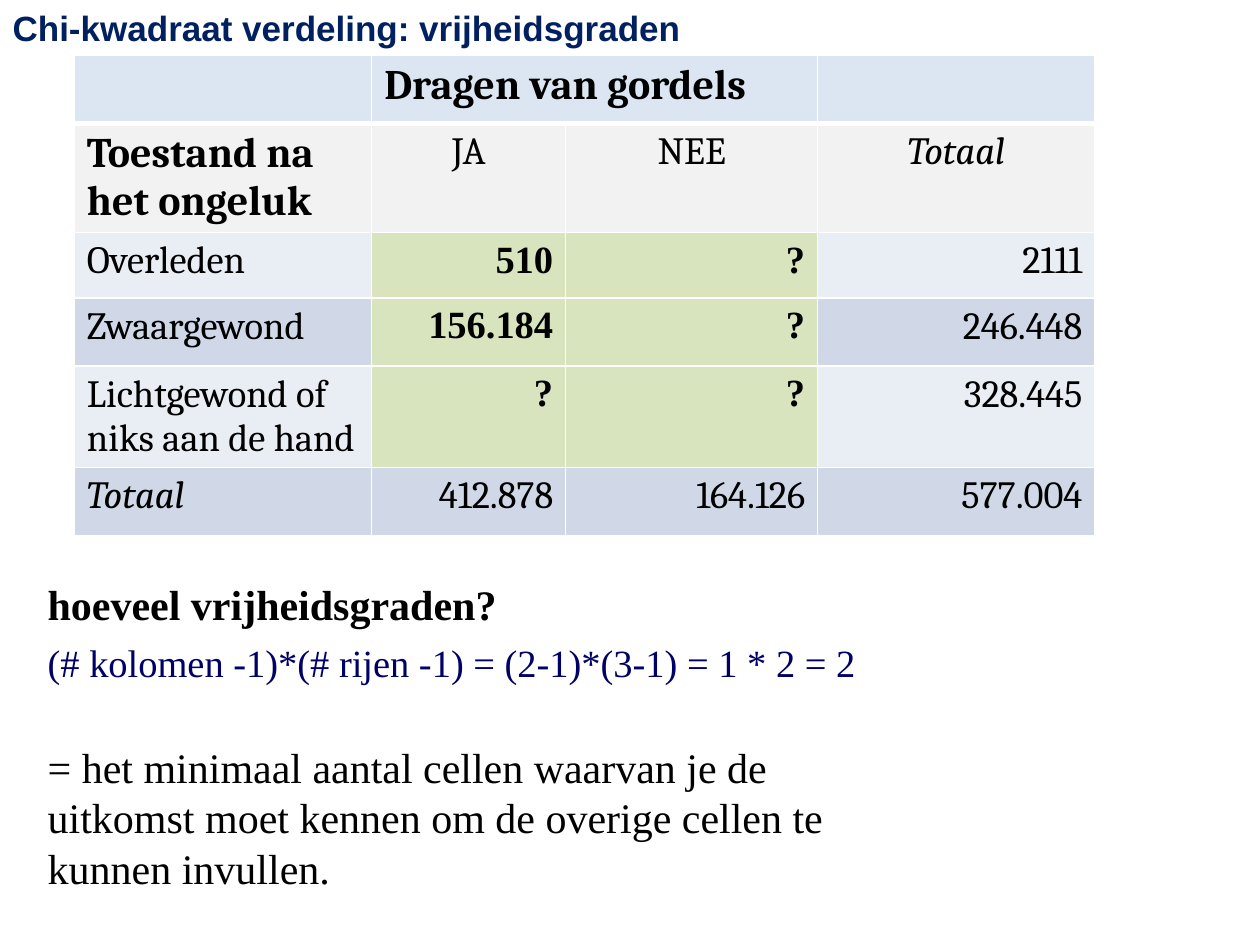
from dataclasses import dataclass
from typing import Optional

from lxml.etree import SubElement
from pptx import Presentation
from pptx.dml.color import RGBColor as RGB
from pptx.enum.text import MSO_ANCHOR as Anchor, PP_ALIGN as Align
from pptx.oxml.ns import qn
from pptx.util import Inches, Pt


@dataclass(frozen=True)
class Theme:
    black: str = "000000"
    title: str = "002060"
    formula: str = "000066"
    white: str = "FFFFFF"
    header: str = "DCE6F2"
    subheader: str = "F2F2F2"
    bands: tuple = ("E9EDF4", "D0D8E8")
    inner: str = "D7E4BD"
    title_size: int = 20
    normal: int = 22
    large: int = 24
    sans: str = "Arial"
    serif: str = "Times New Roman"
    table: str = "Cambria"


THEME = Theme()


@dataclass(frozen=True)
class Style:
    font: str
    size: int
    color: str = THEME.black
    bold: bool = False
    italic: bool = False
    align: Align = Align.LEFT
    before: int = 0


@dataclass(frozen=True)
class Cell:
    fill: str
    text: str = ""
    style: Optional[Style] = None


ROWS = [
    ("", "Dragen van gordels", "", ""),
    ("Toestand na het ongeluk", "JA", "NEE", "Totaal"),
    ("Overleden", "510", "?", "2111"),
    ("Zwaargewond", "156.184", "?", "246.448"),
    ("Lichtgewond of\nniks aan de hand", "?", "?", "328.445"),
    ("Totaal", "412.878", "164.126", "577.004"),
]
COL_WIDTHS = (2.36, 1.54, 2, 2.2)
ROW_HEIGHTS = (0.54, 0.74, 0.52, 0.54, 0.67, 0.54)
LAST_ROW = len(ROWS) - 1

BODY = [
    ("hoeveel vrijheidsgraden?",
     Style(THEME.serif, THEME.large, bold=True, before=6)),
    ("(# kolomen -1)*(# rijen -1) = (2-1)*(3-1) = 1 * 2 = 2",
     Style(THEME.serif, THEME.normal, THEME.formula, before=6)),
    ("= het minimaal aantal cellen waarvan je de uitkomst moet kennen "
     "om de overige cellen te kunnen invullen.",
     Style(THEME.serif, THEME.large, before=32)),
]


def format_paragraph(p, style: Style) -> None:
    p.alignment = style.align
    p.space_before = Pt(style.before)
    p.font.name = style.font
    p.font.size = Pt(style.size)
    p.font.bold = style.bold
    p.font.italic = style.italic
    p.font.color.rgb = RGB.from_string(style.color)


def plan_cell(row: int, col: int) -> Cell:
    """Derive fill and text style from the cell's place in the cross table."""
    text = ROWS[row][col]
    inner = 1 < row < LAST_ROW and col in (1, 2)
    heading = row == 0 or (row, col) == (1, 0)
    if row < 2:
        fill = (THEME.header, THEME.subheader)[row]
    else:
        fill = THEME.inner if inner else THEME.bands[row % 2]
    if row == 0 or col == 0:
        align = Align.LEFT
    else:
        align = Align.CENTER if row == 1 else Align.RIGHT
    style = Style(
        THEME.serif if inner else THEME.table,
        THEME.large if heading else THEME.normal,
        bold=heading or inner,
        italic=text == "Totaal",
        align=align,
    )
    return Cell(fill, text, style)


def add_borders(cell, bottom: int) -> None:
    """Add white borders; they must precede the fill in the cell XML."""
    props = cell._tc.get_or_add_tcPr()
    for side, width in (("L", 1), ("R", 1), ("T", 1), ("B", bottom)):
        line = SubElement(props, qn(f"a:ln{side}"), w=str(Pt(width)))
        fill = SubElement(line, qn("a:solidFill"))
        SubElement(fill, qn("a:srgbClr"), val=THEME.white)


def add_cross_table(slide) -> None:
    frame = slide.shapes.add_table(
        len(ROWS), len(COL_WIDTHS), Inches(0.59), Inches(0.44),
        Inches(sum(COL_WIDTHS)), Inches(sum(ROW_HEIGHTS)))
    table = frame.table
    for column, width in zip(table.columns, COL_WIDTHS):
        column.width = Inches(width)
    for row, height in zip(table.rows, ROW_HEIGHTS):
        row.height = Inches(height)
    table.cell(0, 1).merge(table.cell(0, 2))
    for row in range(len(ROWS)):
        for col in range(len(COL_WIDTHS)):
            cell, plan = table.cell(row, col), plan_cell(row, col)
            add_borders(cell, 3 if row == 0 else 1)
            cell.fill.solid()
            cell.fill.fore_color.rgb = RGB.from_string(plan.fill)
            if plan.text:
                cell.text_frame.text = plan.text
            for p in cell.text_frame.paragraphs:
                format_paragraph(p, plan.style)


def add_title(slide) -> None:
    title = slide.shapes.title
    title.left, title.top = Inches(0), Inches(0)
    title.width, title.height = Inches(5.79), Inches(0.44)
    tf = title.text_frame
    tf.text = "Chi-kwadraat verdeling: vrijheidsgraden"
    tf.vertical_anchor = Anchor.TOP
    format_paragraph(tf.paragraphs[0], Style(
        THEME.sans, THEME.title_size, THEME.title, bold=True))


def add_body(slide) -> None:
    box = slide.shapes.add_textbox(
        Inches(0.28), Inches(4.54), Inches(7.01), Inches(2.63))
    tf = box.text_frame
    tf.word_wrap = True
    for i, (text, style) in enumerate(BODY):
        p = tf.add_paragraph() if i else tf.paragraphs[0]
        p.text = text
        format_paragraph(p, style)


def main() -> None:
    prs = Presentation()
    prs.slide_width, prs.slide_height = Inches(10), Inches(7.5)
    slide = prs.slides.add_slide(prs.slide_layouts[5])
    add_cross_table(slide)
    add_body(slide)
    add_title(slide)
    prs.save("out.pptx")


if __name__ == "__main__":
    main()
